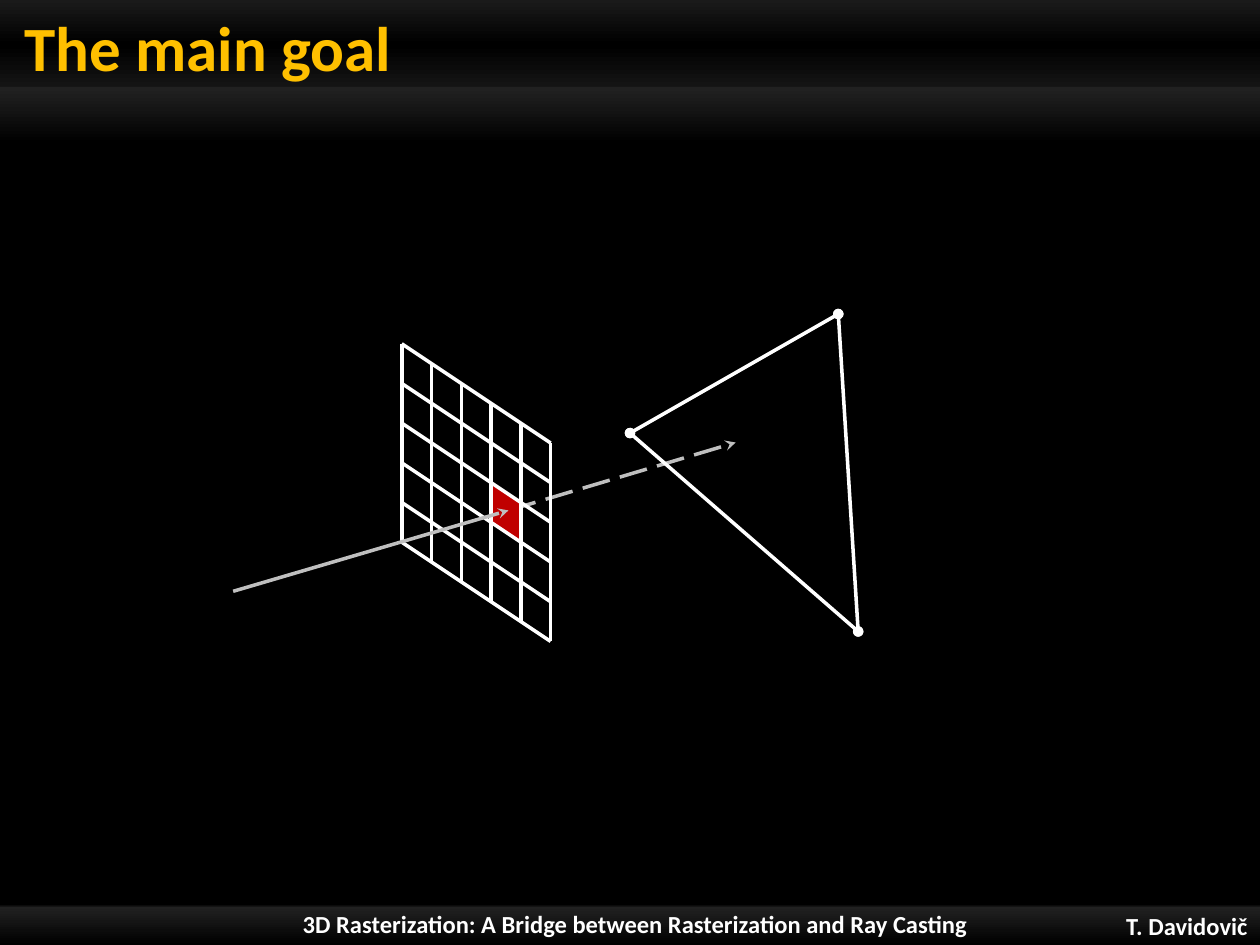
from lxml import etree
from pptx import Presentation
from pptx.dml.color import RGBColor
from pptx.enum import dml, shapes, text
from pptx.oxml import ns
from pptx.util import Cm, Pt

COLORS = {"black": "000000", "white": "FFFFFF", "title": "FFC000",
          "ray": "BFBFBF", "pixel": "C00000",
          "dim": "141414", "soft": "1A1A1A", "bright": "212121"}

# Content: text, box (cm), size, colour, alignment, anchor, insets (left, top, right, bottom)
INSETS = (0.25, 0.13, 0.25, 0.13)
TEXTS = [
    ("T. Davidovič", (20.7, 18.26, 4.7, 0.79), 14, "white", "RIGHT", "MIDDLE", INSETS),
    ("3D Rasterization: A Bridge between Rasterization and Ray Casting",
     (3.56, 18.2, 18.49, 0.85), 14, "white", "CENTER", "MIDDLE", INSETS),
    ("The main goal", (0, 0, 20.9, 1.7), 36, "title", "LEFT", "BOTTOM", (0.5, 0, 0.25, 0)),
]

# Bands: top, height (cm), gradient stops (percent, colour)
BANDS = [
    (18.19, 0.86, [(5, "black"), (10, "dim"), (11, "bright"), (100, "black")]),
    (0, 2.9, [(0, "soft"), (31, "black"), (60, "dim"), (61, "bright"), (100, "black")]),
]

# Geometry (cm)
GRID_LEFT, GRID_TOP, CELLS = 8.1, 6.93, 5
CELL_WIDTH, CELL_HEIGHT, SLANT = 0.6, 0.8, 0.4
HIT_COLUMN, HIT_ROW = 3, 2
TRIANGLE = [(12.7, 8.73), (16.9, 6.33), (17.3, 12.73)]
RAY_START, RAY_HIT, RAY_END = (4.7, 11.92), (10.25, 10.29), (14.83, 8.92)

deck = Presentation()
deck.slide_width, deck.slide_height = Cm(25.4), Cm(19.05)
page = deck.slides.add_slide(deck.slide_layouts[6])


def rgb(name):
    return RGBColor.from_string(COLORS[name])


def grid_point(column, row):
    return (GRID_LEFT + column * CELL_WIDTH,
            GRID_TOP + row * CELL_HEIGHT + column * SLANT)


def add_band(top, height, stops):
    band = page.shapes.add_shape(shapes.MSO_SHAPE.RECTANGLE, 0, Cm(top),
                                 deck.slide_width, Cm(height))
    band.shadow.inherit = False
    band.line.fill.background()
    band.fill.gradient()
    band.fill.gradient_angle = 270
    stop_list = band._element.spPr.find(".//" + ns.qn("a:gsLst"))
    for old_stop in list(stop_list):
        stop_list.remove(old_stop)
    for percent, name in stops:
        stop = etree.SubElement(stop_list, ns.qn("a:gs"), pos=str(percent * 1000))
        etree.SubElement(stop, ns.qn("a:srgbClr"), val=COLORS[name])


def add_text(content, place, size, color, align, anchor, insets):
    box = page.shapes.add_textbox(*map(Cm, place))
    frame = box.text_frame
    frame.word_wrap = True
    frame.vertical_anchor = getattr(text.MSO_ANCHOR, anchor)
    (frame.margin_left, frame.margin_top,
     frame.margin_right, frame.margin_bottom) = map(Cm, insets)
    para = frame.paragraphs[0]
    para.alignment = getattr(text.PP_ALIGN, align)
    span = para.add_run()
    span.text = content
    span.font.name, span.font.size, span.font.bold = "Calibri", Pt(size), True
    span.font.color.rgb = rgb(color)


def add_line(start, end, color="white", head=None, tail=None, dash=None):
    line = page.shapes.add_connector(shapes.MSO_CONNECTOR.STRAIGHT,
                                     *map(Cm, start + end))
    line.line.color.rgb = rgb(color)
    line.line.width = Pt(2)
    if dash:
        line.line.dash_style = dash
    outline = line.line._get_or_add_ln()
    for tag, kind in (("a:headEnd", head), ("a:tailEnd", tail)):
        if kind:
            etree.SubElement(outline, ns.qn(tag), type=kind)
    etree.SubElement(line._element.spPr, ns.qn("a:effectLst"))


# Background, bands and footer
page.background.fill.solid()
page.background.fill.fore_color.rgb = rgb("black")
for band_row in BANDS:
    add_band(*band_row)
for text_row in TEXTS:
    add_text(*text_row)

# Ray beyond the image plane
add_line(RAY_HIT, RAY_END, "ray", tail="stealth", dash=dml.MSO_LINE.LONG_DASH)

# Pixel hit by the ray
corners = [tuple(map(Cm, grid_point(HIT_COLUMN + right, HIT_ROW + down)))
           for right, down in ((0, 0), (1, 0), (1, 1), (0, 1))]
builder = page.shapes.build_freeform(*corners[0])
builder.add_line_segments(corners[1:], close=True)
pixel = builder.convert_to_shape()
pixel.shadow.inherit = False
pixel.fill.solid()
pixel.fill.fore_color.rgb = rgb("pixel")
pixel.line.fill.background()

# Slanted pixel grid
for step in range(CELLS + 1):
    add_line(grid_point(step, 0), grid_point(step, CELLS))
for step in range(CELLS + 1):
    add_line(grid_point(0, step), grid_point(CELLS, step))

# Triangle with dotted corners
for corner, following in zip(TRIANGLE, TRIANGLE[1:] + TRIANGLE[:1]):
    add_line(corner, following, head="oval", tail="oval")

# Ray up to the image plane
add_line(RAY_START, RAY_HIT, "ray", tail="stealth")

deck.save("out.pptx")
